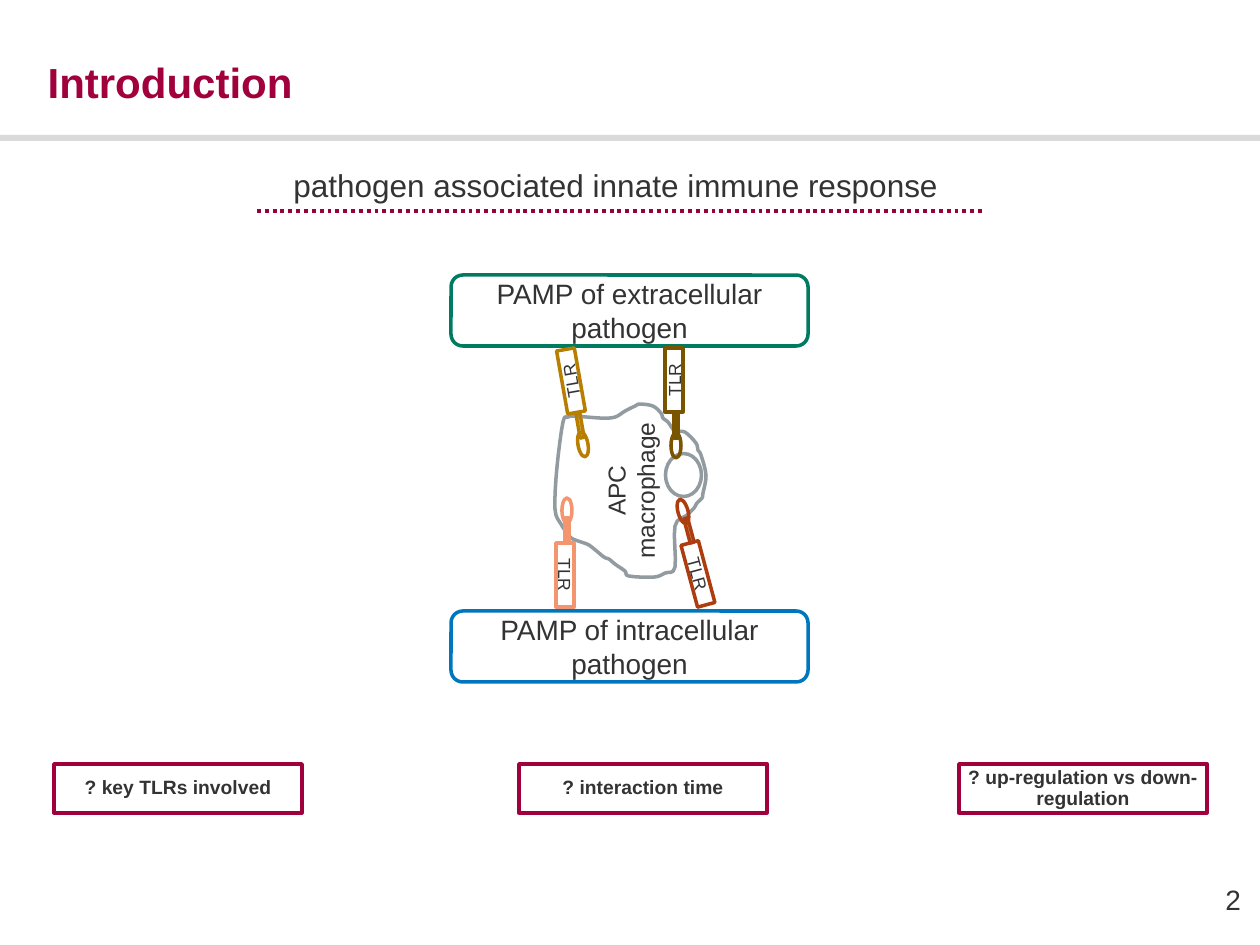
from lxml import etree
from pptx import Presentation, util as u
from pptx.dml.color import RGBColor
from pptx.enum import dml, shapes, text
from pptx.oxml.ns import qn

SCALE = 914400 / 126  # EMU per px
THEME = {
    "font": "Arial", "ink": "333333", "accent": "A0003C", "white": "FFFFFF",
    "rule": "DADADA", "dots": "9C003B", "cell": "919BA0",
    "extracellular": "007A61", "intracellular": "0076BD",
    "receptors": ["B87E00", "7B5400", "F3966F", "AD3D0E"],
    "title": 24, "subtitle": 18, "pamp": 16, "number": 16,
    "macrophage": 14, "question": 11, "receptor": 10, "outline": 2,
}
RECT = shapes.MSO_SHAPE.RECTANGLE
OVAL = shapes.MSO_SHAPE.OVAL
MIDDLE = text.MSO_ANCHOR.MIDDLE
CENTER = text.PP_ALIGN.CENTER

presentation = Presentation()
presentation.slide_width = round(1260 * SCALE)
presentation.slide_height = round(945 * SCALE)
slide = presentation.slides.add_slide(presentation.slide_layouts[5])


def add_box(kind, box, line=None, fill=None, rotation=0):
    shape = slide.shapes.add_shape(kind, *(round(n * SCALE) for n in box))
    shape.shadow.inherit = False
    shape.rotation = rotation
    if fill:
        shape.fill.solid()
        shape.fill.fore_color.rgb = RGBColor.from_string(fill)
    else:
        shape.fill.background()
    if line:
        shape.line.color.rgb = RGBColor.from_string(line)
        shape.line.width = u.Pt(THEME["outline"])
    else:
        shape.line.fill.background()
    return shape


def write(shape, words, size, align=CENTER, anchor=MIDDLE, bold=False, color=THEME["ink"]):
    frame = shape.text_frame
    frame.text = words
    frame.word_wrap = True
    frame.vertical_anchor = anchor
    for paragraph in frame.paragraphs:
        paragraph.alignment = align
        for run in paragraph.runs:
            run.font.name = THEME["font"]
            run.font.size = u.Pt(size)
            run.font.bold = bold
            run.font.color.rgb = RGBColor.from_string(color)
    return frame


# Header
add_box(RECT, (0, 135, 1260, 6), fill=THEME["rule"])
title = slide.shapes.title
title.left, title.top, title.width, title.height = (round(n * SCALE) for n in (35, 50, 992, 95))
write(title, "Introduction", THEME["title"], text.PP_ALIGN.LEFT, text.MSO_ANCHOR.TOP,
      True, THEME["accent"])

# Macrophage: outline as seen on the slide, smoothed, then laid on its side
outline = [
    (587, 544), (573, 539), (568, 534), (561, 524), (555, 509), (557, 467), (563, 422),
    (568, 417), (575, 416), (601, 418), (615, 417), (625, 411), (635, 406), (640, 404),
    (653, 406), (661, 413), (663, 418), (668, 422), (675, 431), (685, 432), (696, 443),
    (698, 450), (701, 455), (706, 475), (703, 493), (702, 498), (697, 503), (694, 508),
    (687, 515), (675, 526), (675, 567), (665, 573), (654, 577), (629, 576), (625, 571),
    (615, 564), (609, 559), (604, 557), (593, 548),
]
STEPS = 4
smooth = []
for i in range(len(outline)):
    before, start, end, after = (outline[(i + k) % len(outline)] for k in (-1, 0, 1, 2))
    for t in (step / STEPS for step in range(STEPS)):
        smooth.append(tuple(
            b + ((c - a) * t + (2 * a - 5 * b + 4 * c - d) * t**2
                 + (3 * b - a - 3 * c + d) * t**3) / 2
            for a, b, c, d in zip(before, start, end, after)))
center_x, center_y = ((min(axis) + max(axis)) / 2 for axis in zip(*smooth))
turned = [(round((center_x + center_y - y) * SCALE), round((center_y + x - center_x) * SCALE))
          for x, y in smooth]
builder = slide.shapes.build_freeform(*turned[0])
builder.add_line_segments(turned[1:], close=True)
macrophage = builder.convert_to_shape()
macrophage.shadow.inherit = False
macrophage.rotation = 270
macrophage.fill.background()
macrophage.line.color.rgb = RGBColor.from_string(THEME["cell"])
macrophage.line.width = u.Pt(THEME["outline"])
write(macrophage, "APC\nmacrophage", THEME["macrophage"])
add_box(shapes.MSO_SHAPE.FLOWCHART_CONNECTOR, (662, 457, 43, 36), THEME["cell"], rotation=270)

# Pathogen patterns
for place, top in (("extracellular", 275), ("intracellular", 611)):
    pamp = add_box(shapes.MSO_SHAPE.ROUNDED_RECTANGLE, (451, top, 357, 71), THEME[place])
    write(pamp, f"PAMP of {place} pathogen", THEME["pamp"])

# Receptors: left and top of label, foot and stem, then rotation and text direction
receptors = [
    ((562, 349), (578, 432), (578, 413), 350, "vert270"),
    ((665, 348), (671, 433), (674, 413), 0, "vert270"),
    ((556, 543), (562, 498), (565, 518), 0, "vert"),
    ((689, 542), (678, 499), (687, 518), 345, "vert"),
]
for color, (label, foot, stem, rotation, direction) in zip(THEME["receptors"], receptors):
    receptor = add_box(RECT, (*label, 18, 64), color, rotation=rotation)
    write(receptor, "TLR", THEME["receptor"])
    receptor.element.txBody.bodyPr.set("vert", direction)
    add_box(OVAL, (*foot, 10, 25), color, rotation=rotation)
    add_box(RECT, (*stem, 4, 25), color, rotation=rotation)

# Subtitle
subtitle = add_box(RECT, (281, 160, 675, 50), fill=THEME["white"])
write(subtitle, "pathogen associated innate immune response", THEME["subtitle"],
      text.PP_ALIGN.LEFT, text.MSO_ANCHOR.TOP).word_wrap = False
underline = slide.shapes.add_connector(
    shapes.MSO_CONNECTOR.STRAIGHT, *(round(n * SCALE) for n in (257, 211, 982, 211)))
underline.line.color.rgb = RGBColor.from_string(THEME["dots"])
underline.line.width = u.Pt(2.25)
underline.line.dash_style = dml.MSO_LINE.ROUND_DOT
etree.SubElement(underline.element.spPr, qn("a:effectLst"))

# Open questions
questions = [(54, "? key TLRs involved"), (519, "? interaction time"),
             (959, "? up-regulation vs down-regulation")]
for left, words in questions:
    question = add_box(RECT, (left, 764, 248, 49), THEME["accent"], THEME["white"])
    frame = write(question, words, THEME["question"], bold=True)
    frame.margin_left = frame.margin_right = frame.margin_top = frame.margin_bottom = 0
    frame.paragraphs[0].line_spacing = 0.9

# Slide number
number = slide.shapes.add_textbox(*(round(n * SCALE) for n in (1164, 874, 77, 50)))
frame = write(number, "2", THEME["number"], text.PP_ALIGN.RIGHT)
frame.margin_left = frame.margin_right = 0

presentation.save("out.pptx")
